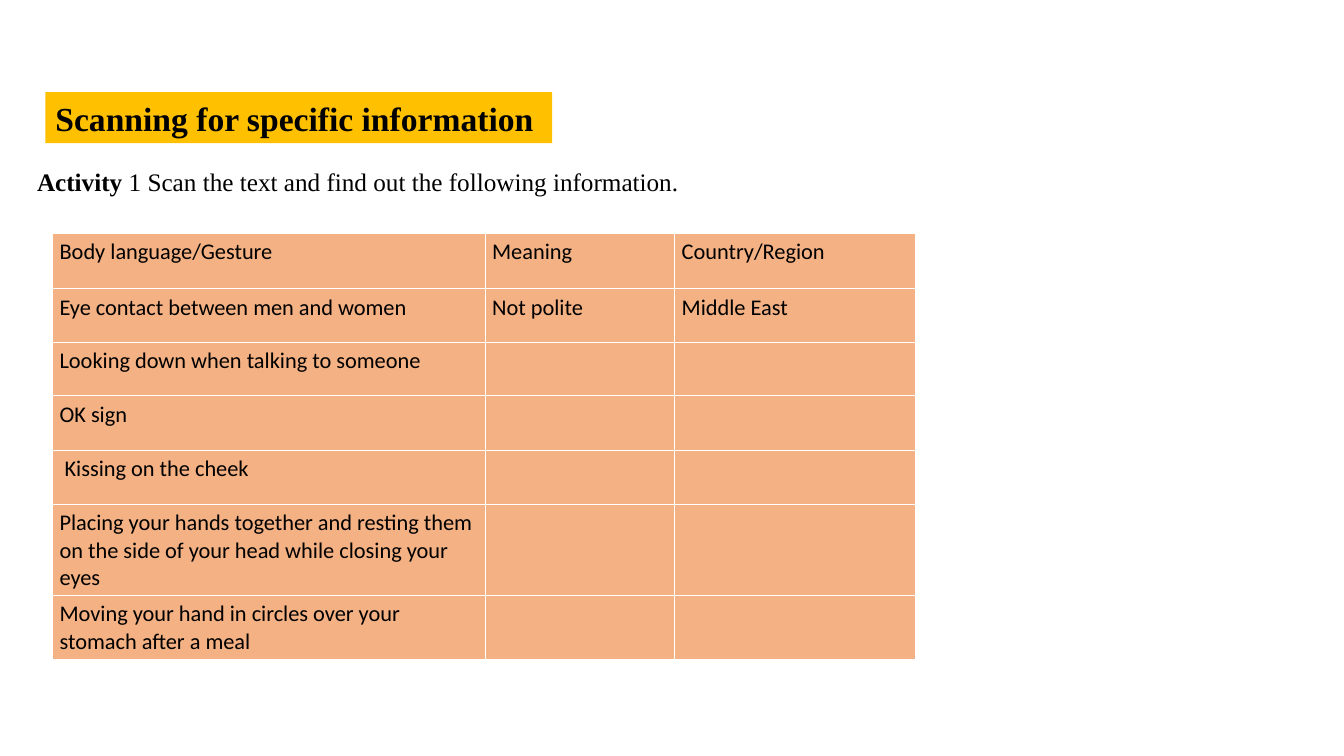
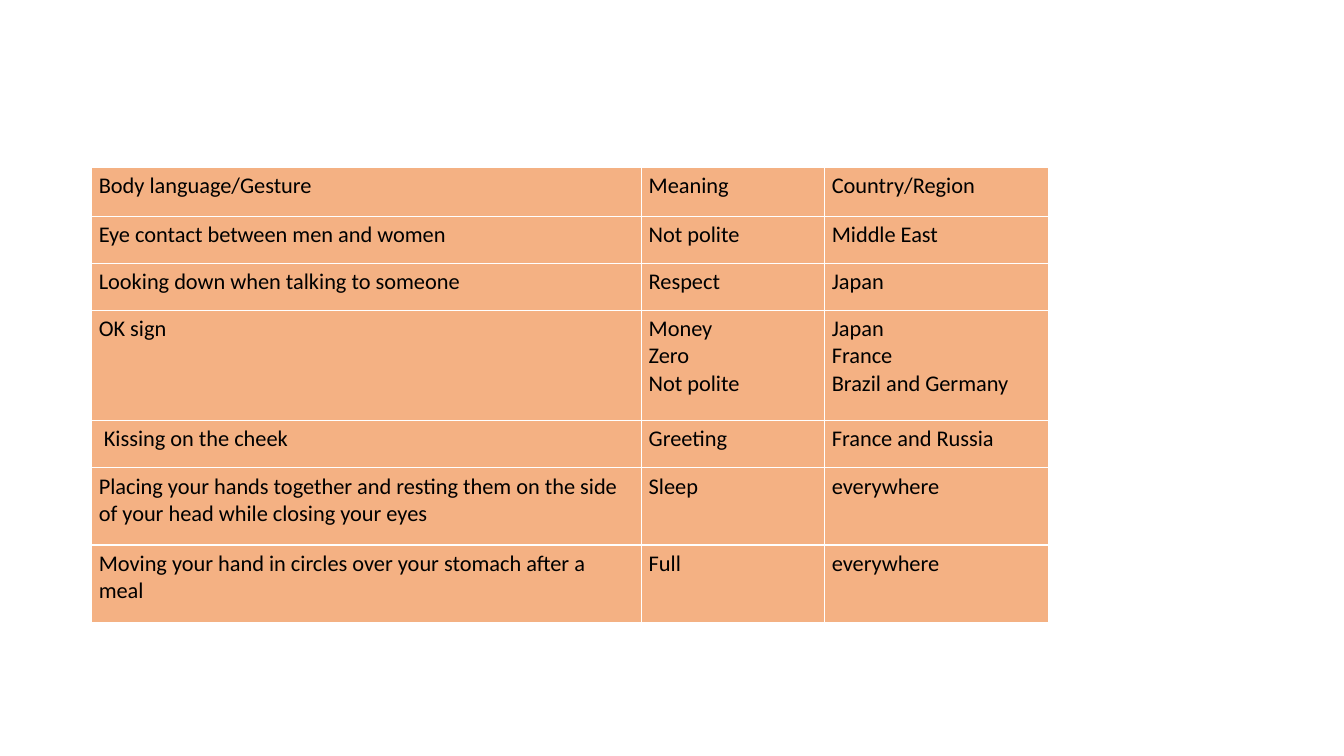
import pptx
import pptx.util
import pptx.dml.color
import pptx.enum.text
import pptx.oxml

Pt = pptx.util.Pt
RGB = pptx.dml.color.RGBColor.from_string
PP_ALIGN = pptx.enum.text.PP_ALIGN
AUTO_SIZE = pptx.enum.text.MSO_AUTO_SIZE
COLORS = {"text": "000000", "band": "FFC000", "cell": "F4B183", "border": "FFFFFF"}
SERIF, SANS = "Times New Roman", "Calibri"
NS = "http://schemas.openxmlformats.org/drawingml/2006/main"

HEADER = ["Body language/Gesture", "Meaning", "Country/Region"]
GESTURES = [
    "Eye contact between men and women",
    "Looking down when talking to someone",
    "OK sign",
    " Kissing on the cheek",
    "Placing your hands together and resting them on the side of your head while closing your eyes",
    "Moving your hand in circles over your stomach after a meal",
]
ANSWERS = [
    ("Not polite", "Middle East"),
    ("Respect", "Japan"),
    ("Money\nZero\nNot polite", "Japan\nFrance\nBrazil and Germany"),
    ("Greeting", "France and Russia"),
    ("Sleep", "everywhere"),
    ("Full", "everywhere"),
]


def style_font(p, name, size, bold=False):
    p.font.name = name
    p.font.size = Pt(size)
    p.font.bold = bold
    p.font.color.rgb = RGB(COLORS["text"])


def add_gesture_table(s, left, top, widths, heights, answers):
    rows = [HEADER] + [[g, *a] for g, a in zip(GESTURES, answers)]
    table = s.shapes.add_table(len(rows), len(widths), Pt(left), Pt(top),
                               Pt(sum(widths)), Pt(sum(heights))).table
    table.first_row = table.horz_banding = False
    for column, width in zip(table.columns, widths):
        column.width = Pt(width)
    for row, height, texts in zip(table.rows, heights, rows):
        row.height = Pt(height)
        for cell, text in zip(row.cells, texts):
            cell.margin_left = cell.margin_right = Pt(5)
            cell.margin_top = cell.margin_bottom = Pt(3.6)
            cell.text = text
            for p in cell.text_frame.paragraphs:
                style_font(p, SANS, 16)
            cell.fill.solid()
            cell.fill.fore_color.rgb = RGB(COLORS["cell"])
            # Borders come before the fill in the cell properties
            tcPr = cell._tc.get_or_add_tcPr()
            for i, side in enumerate(("lnL", "lnR", "lnT", "lnB")):
                tcPr.insert(i, pptx.oxml.parse_xml(
                    f'<a:{side} xmlns:a="{NS}" w="12700"><a:solidFill>'
                    f'<a:srgbClr val="{COLORS["border"]}"/></a:solidFill></a:{side}>'))


prs = pptx.Presentation()
prs.slide_width, prs.slide_height = Pt(960), Pt(540)

# Slide 1: title band
s = prs.slides.add_slide(prs.slide_layouts[5])
title = s.shapes.title
title.left, title.top, title.width, title.height = Pt(32.4), Pt(65.8), Pt(362), Pt(36.4)
title.fill.solid()
title.fill.fore_color.rgb = RGB(COLORS["band"])
tf = title.text_frame
tf.text = "Scanning for specific information"
tf.auto_size = AUTO_SIZE.NONE
p = tf.paragraphs[0]
p.alignment = PP_ALIGN.LEFT
style_font(p, SERIF, 24, bold=True)

# Slide 1: instruction
tf = s.shapes.add_textbox(Pt(19.4), Pt(115.5), Pt(477.4), Pt(29)).text_frame
tf.word_wrap = False
tf.auto_size = AUTO_SIZE.SHAPE_TO_FIT_TEXT
p = tf.paragraphs[0]
p.alignment = PP_ALIGN.JUSTIFY
style_font(p, SERIF, 18)
r = p.add_run()
r.text = "Activity"
r.font.bold = True
p.add_run().text = " 1 Scan the text and find out the following information."

# Slide 1: table to fill in, with the first answer given
add_gesture_table(s, 37.6, 166.6, [309, 135.4, 172],
                  [39.6, 38.4, 38.2, 38.8, 38.8, 65, 45],
                  ANSWERS[:1] + [("", "")] * (len(ANSWERS) - 1))

# Slide 2: completed table
s = prs.slides.add_slide(prs.slide_layouts[6])
add_gesture_table(s, 65.6, 119.6, [392.8, 130.8, 159.8],
                  [35, 33.6, 33.4, 78.8, 33.8, 55.2, 55.2], ANSWERS)

prs.save("out.pptx")
